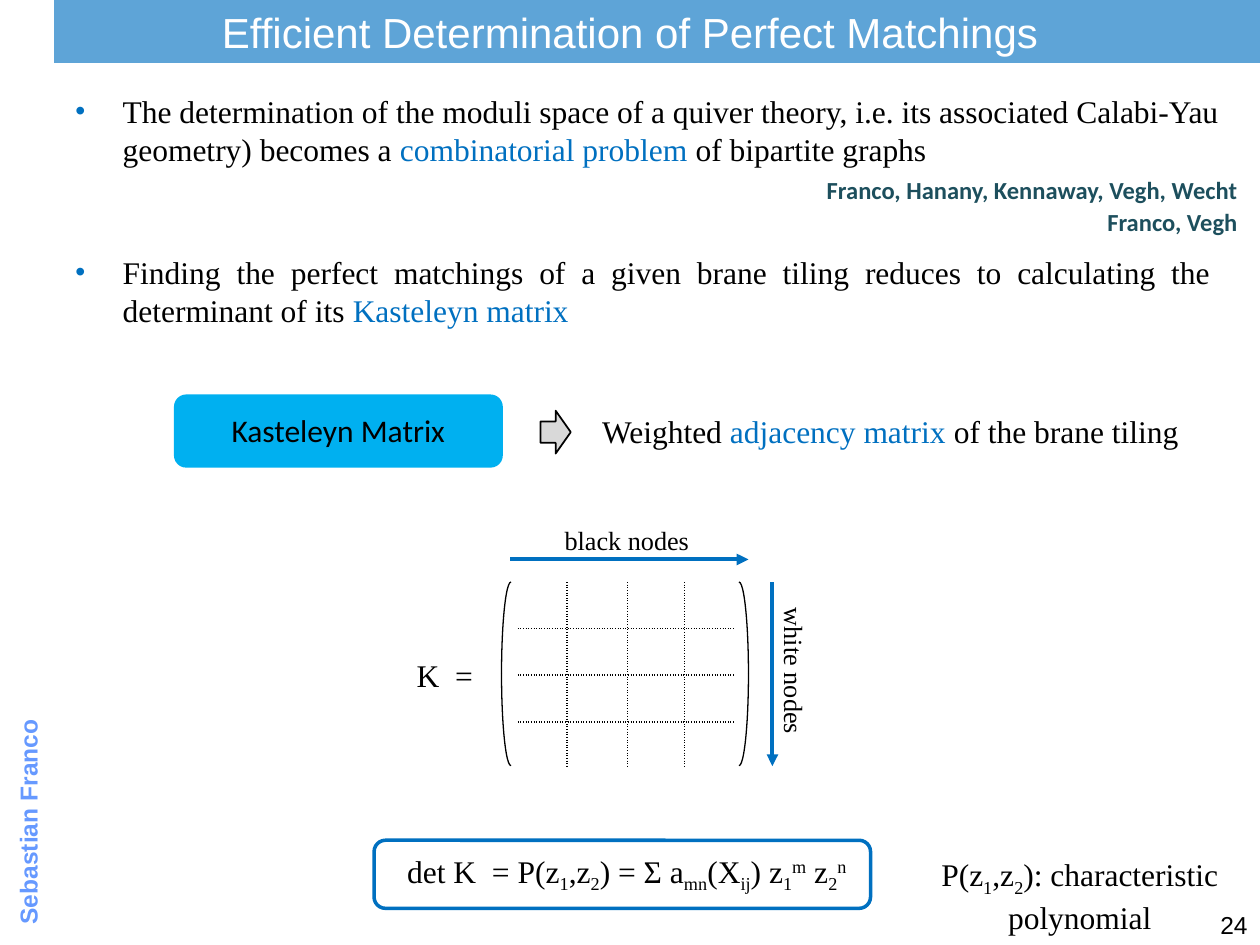
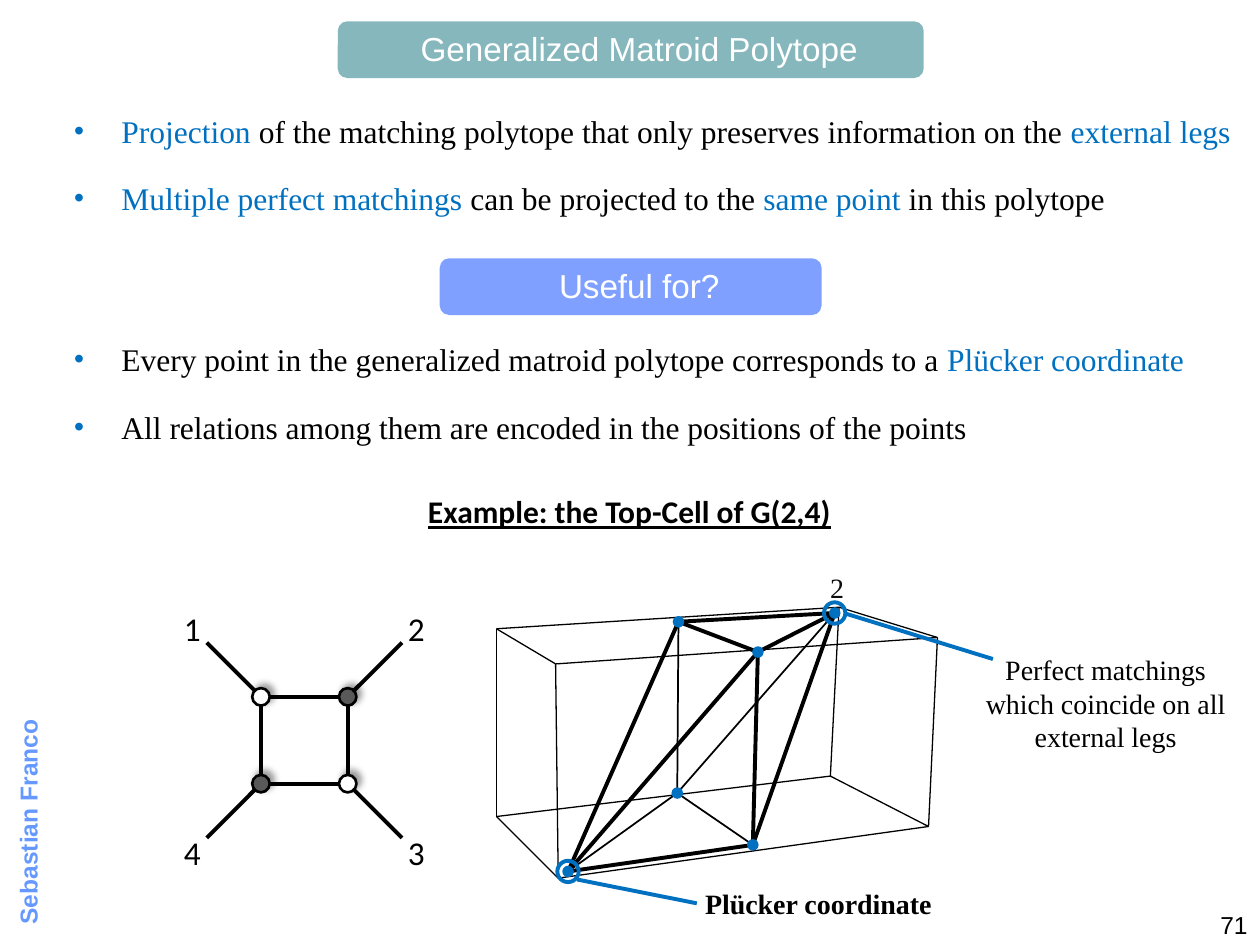
"""Build two slides on perfect matchings and the generalized matroid polytope."""
from itertools import combinations, product
from typing import NamedTuple

from lxml import etree
from pptx import Presentation
from pptx import util as u
from pptx.dml import color as dml
from pptx.enum import shapes, text
from pptx.oxml import ns

COLORS = {
    "black": "000000", "white": "FFFFFF", "accent": "0070C0", "author": "6699FF",
    "citation": "1D4F5D", "teal": "3C8C93", "violet": "3366FF", "cyan": "00B0F0",
    "light_gray": "D9D9D9", "dark_gray": "595959", "label": "0D0D0D",
}
SERIF, SANS, TITLE_FONT = "Times New Roman", "Calibri", "Arial"
LEFT, CENTER = text.PP_ALIGN.LEFT, text.PP_ALIGN.CENTER
RIGHT, JUSTIFY = text.PP_ALIGN.RIGHT, text.PP_ALIGN.JUSTIFY
SHAPE = shapes.MSO_SHAPE
SUBSCRIPT, SUPERSCRIPT = -25000, 30000
HANGING = 27


class Box(NamedTuple):
    left: float
    top: float
    width: float
    height: float


class Point(NamedTuple):
    x: float
    y: float


class Run(NamedTuple):
    text: str
    color: str = ""
    baseline: int = 0


class Bullet(NamedTuple):
    box: Box
    runs: list[Run]
    align: int = LEFT


class Band(NamedTuple):
    text: str
    box: Box
    color: str


def key(words: str) -> Run:
    return Run(words, "accent")


def sub(words: str) -> Run:
    return Run(words, baseline=SUBSCRIPT)


def sup(words: str) -> Run:
    return Run(words, baseline=SUPERSCRIPT)


def rgb(name: str) -> dml.RGBColor:
    return dml.RGBColor.from_string(COLORS[name])


def points(values) -> list:
    return [u.Pt(value) for value in values]


def add_xml(parent, tag: str, **attributes):
    return etree.SubElement(parent, ns.qn(tag), {name: str(value) for name, value in attributes.items()})


def add_color(parent, name: str):
    return add_xml(parent, "a:srgbClr", val=COLORS[name])


def add_text(slide, box: Box, content: str | list[Run], *, size: float = 18, font: str = SERIF,
             color: str = "black", align: int = LEFT, bold: bool = False,
             underline: bool = False, rotation: int = 0, bullet: bool = False) -> None:
    shape = slide.shapes.add_textbox(*points(box))
    shape.rotation = rotation
    shape.text_frame.word_wrap = True
    paragraph = shape.text_frame.paragraphs[0]
    paragraph.alignment = align
    if bullet:
        properties = paragraph._p.get_or_add_pPr()
        properties.set("marL", str(u.Pt(HANGING)))
        properties.set("indent", str(-u.Pt(HANGING)))
        add_color(add_xml(properties, "a:buClr"), "accent")
        add_xml(properties, "a:buSzPct", val=90000)
        add_xml(properties, "a:buFont", typeface="Arial")
        add_xml(properties, "a:buChar", char="•")
    for part in [Run(content)] if isinstance(content, str) else content:
        run = paragraph.add_run()
        run.text = part.text
        run.font.name, run.font.size = font, u.Pt(size)
        run.font.bold, run.font.underline = bold, underline
        run.font.color.rgb = rgb(part.color or color)
        if part.baseline:
            run._r.get_or_add_rPr().set("baseline", str(part.baseline))


def add_shape(slide, kind: int, box: Box, *, fill: str = "", opacity: int = 100, line: str = "",
              width: float = 1, shadow: bool = False):
    shape = slide.shapes.add_shape(kind, *points(box))
    shape.shadow.inherit = False
    if fill:
        shape.fill.solid()
        shape.fill.fore_color.rgb = rgb(fill)
        if opacity < 100:
            solid = shape._element.spPr.find(ns.qn("a:solidFill"))
            add_xml(solid[0], "a:alpha", val=opacity * 1000)
    else:
        shape.fill.background()
    if line:
        shape.line.color.rgb = rgb(line)
        shape.line.width = u.Pt(width)
    else:
        shape.line.fill.background()
    if shadow:
        effects = shape._element.spPr.find(ns.qn("a:effectLst"))
        outer = add_xml(effects, "a:outerShdw", blurRad=u.Pt(4), dist=u.Pt(3), dir=315 * 60000)
        add_xml(add_color(outer, "black"), "a:alpha", val=40000)
    return shape


def add_circle(slide, center: Point, diameter: float, **style) -> None:
    box = Box(center.x - diameter / 2, center.y - diameter / 2, diameter, diameter)
    add_shape(slide, SHAPE.OVAL, box, **style)


def add_line(slide, start: Point, end: Point, *, color: str = "black", width: float = 2.25,
             arrow: bool = False) -> None:
    connector = slide.shapes.add_connector(shapes.MSO_CONNECTOR.STRAIGHT, *points((*start, *end)))
    connector.line.color.rgb = rgb(color)
    connector.line.width = u.Pt(width)
    if arrow:
        add_xml(connector.line._get_or_add_ln(), "a:tailEnd", type="triangle")
    add_xml(connector._element.spPr, "a:effectLst")


def add_bullets(slide, bullets: list[Bullet]) -> None:
    for item in bullets:
        add_text(slide, item.box, item.runs, align=item.align, bullet=True)


def add_band(slide, band: Band) -> None:
    add_shape(slide, SHAPE.ROUNDED_RECTANGLE, band.box, fill=band.color, opacity=62)
    add_text(slide, Box(62.3, band.box.top + 0.7, 606, 30), band.text, size=19, font=TITLE_FONT,
             color="white", align=CENTER)


def new_slide(presentation, number: int):
    slide = presentation.slides.add_slide(presentation.slide_layouts[6])
    add_text(slide, Box(-92.2, 403.2, 228.2, 36), "Sebastian Franco", size=14, font=TITLE_FONT,
             color="author", bold=True, rotation=270)
    add_text(slide, Box(684, 516.2, 36, 24), str(number), size=14, font=TITLE_FONT, align=RIGHT)
    return slide


def add_matrix(slide) -> None:
    column_widths, row_height = [28, 34.8, 32.4, 28.8], 26
    count = len(column_widths)
    frame = slide.shapes.add_table(count, count, *points((295.9, 332.6, sum(column_widths), count * row_height)))
    table = frame.table
    table.first_row = table.horz_banding = False
    for column, width in zip(table.columns, column_widths):
        column.width = u.Pt(width)
    for row in table.rows:
        row.height = u.Pt(row_height)
    for row, column in product(range(count), repeat=2):
        cell = table.cell(row, column)
        cell.margin_top = cell.margin_bottom = u.Pt(2.5)
        properties = cell._tc.get_or_add_tcPr()
        inner = {"L": column > 0, "R": column < count - 1, "T": row > 0, "B": row < count - 1}
        for side, visible in inner.items():
            border = add_xml(properties, f"a:ln{side}", w=u.Pt(1))
            if visible:
                add_color(add_xml(border, "a:solidFill"), "black")
                add_xml(border, "a:prstDash", val="sysDot")
            else:
                add_xml(border, "a:noFill")
        cell.fill.background()
    for left, flipped in ((286.6, True), (416.9, False)):
        for upside_down in (False, True):
            arc = add_shape(slide, SHAPE.ARC, Box(left, 332.6, 10.8, 105), line="black", width=0.75)
            arc._element.spPr.xfrm.set("flipH", str(int(flipped)))
            arc._element.spPr.xfrm.set("flipV", str(int(upside_down)))
    add_text(slide, Box(231, 371.5, 85.7, 36), "K  =")
    add_line(slide, Point(291.6, 319.7), Point(427.7, 319.7), color="accent", arrow=True)
    add_line(slide, Point(441.4, 332.6), Point(441.4, 437.8), color="accent", arrow=True)
    add_text(slide, Box(295.9, 295.9, 124.6, 23.8), "black nodes", size=15, align=CENTER)
    add_text(slide, Box(392.4, 371.5, 124.6, 23.8), "white nodes", size=15, align=CENTER, rotation=90)


def build_matchings_slide(presentation) -> None:
    slide = new_slide(presentation, 24)
    add_shape(slide, SHAPE.RECTANGLE, Box(31, 0, 689, 36), fill="accent", opacity=63)
    add_text(slide, Box(94.3, 0, 531.4, 36), "Efficient Determination of Perfect Matchings", size=24,
             font=TITLE_FONT, color="white", align=CENTER)
    for top, names in ((96.5, "Franco, Hanany, Kennaway, Vegh, Wecht"), (114.5, "Franco, Vegh")):
        add_text(slide, Box(264.2, top, 450, 30), names, size=14, font=SANS, color="citation",
                 align=RIGHT, bold=True)
    add_bullets(slide, [
        Bullet(Box(36, 49, 675.4, 30), [
            Run("The determination of the moduli space of a quiver theory, i.e. its associated "
                "Calabi-Yau geometry) becomes a "),
            key("combinatorial problem "), Run("of bipartite graphs")]),
        Bullet(Box(36, 141.1, 663.1, 50.4), [
            Run("Finding the perfect matchings of a given brane tiling reduces to calculating the "
                "determinant of its "), key("Kasteleyn matrix")], JUSTIFY),
    ])
    add_shape(slide, SHAPE.ROUNDED_RECTANGLE, Box(99.4, 225.4, 187.9, 41.8), fill="cyan")
    add_text(slide, Box(105.1, 231.1, 176.4, 28), "Kasteleyn Matrix", font=SANS, align=CENTER)
    add_shape(slide, SHAPE.RIGHT_ARROW, Box(308.9, 234.7, 17.3, 24.5), fill="light_gray", line="black")
    add_text(slide, Box(337, 231.8, 366.5, 32.4), [
        Run("Weighted "), key("adjacency matrix "), Run("of the brane tiling")])
    add_matrix(slide)
    add_shape(slide, SHAPE.ROUNDED_RECTANGLE, Box(213.8, 480.2, 283.7, 38.9), line="accent", width=2)
    polynomial = [Run("P(z"), sub("1"), Run(",z"), sub("2")]
    add_text(slide, Box(216, 483.1, 284.4, 40.3), [
        Run("det K  = "), *polynomial, Run(") = Σ a"), sub("mn"), Run("(X"), sub("ij"), Run(") z"),
        sub("1"), sup("m"), Run(" z"), sub("2"), sup("n")], align=CENTER)
    add_text(slide, Box(514.1, 485.3, 205.9, 51.1),
             [*polynomial, Run("): characteristic polynomial")], align=CENTER)


def add_square_graph(slide) -> None:
    center, half, leg, label_offset = Point(173.9, 423), 24.8, 31, 39.2
    signs = [(-1, -1), (1, -1), (1, 1), (-1, 1)]
    nodes = [Point(center.x + dx * half, center.y + dy * half) for dx, dy in signs]
    for index, (node, (dx, dy)) in enumerate(zip(nodes, signs)):
        add_line(slide, node, nodes[index - 1])
        add_line(slide, node, Point(node.x + dx * leg, node.y + dy * leg))
        label = Box(node.x + dx * label_offset - 17.6, node.y + dy * label_offset - 15.1, 35.2, 30.2)
        add_text(slide, label, str(index + 1), size=19, font=SANS, align=CENTER)
    for index, node in enumerate(nodes):
        add_circle(slide, node, 10, fill=("white", "dark_gray")[index % 2], line="black", width=1.5,
                   shadow=True)


def add_polytope(slide) -> None:
    upper = [Point(283.7, 359.3), Point(479.5, 347), Point(535.7, 364.3), Point(317.5, 379.4)]
    lower = [Point(283.7, 466.6), Point(474.5, 443.5), Point(530.6, 472.3), Point(319, 501.8)]
    for index in range(4):
        for start, end in ((upper[index - 1], upper[index]), (lower[index - 1], lower[index]),
                           (upper[index], lower[index])):
            add_line(slide, start, end, width=0.75)
    vertices = {
        "top": Point(387.7, 355.3), "apex": Point(477, 350.3), "middle": Point(433.1, 372.6),
        "origin": Point(324.6, 498), "corner": Point(430.2, 482.8), "hidden": Point(387, 453.2),
    }
    opposite = [{"top", "corner"}, {"apex", "origin"}, {"middle", "hidden"}]
    for pair in combinations(vertices, 2):
        if set(pair) not in opposite:
            add_line(slide, *(vertices[name] for name in pair), width=1 if "hidden" in pair else 2.25)
    for vertex in vertices.values():
        add_circle(slide, vertex, 6.6, fill="accent")
    add_text(slide, Box(467.3, 322.6, 25.2, 29.5), "2", size=16, color="label")
    callouts = {"apex": (Point(483.1, 350.6), Point(567.4, 376.6)),
                "origin": (Point(329.8, 502.6), Point(398.2, 516.2))}
    for name, ends in callouts.items():
        add_circle(slide, vertices[name], 12.2, line="accent", width=2.25)
        add_line(slide, *ends, color="accent")
    add_text(slide, Box(547.9, 369.4, 167.8, 79.9),
             "Perfect matchings which coincide on all external legs", size=16, align=CENTER)
    add_text(slide, Box(352.8, 503.3, 229.7, 27.4), "Plücker coordinate", size=16, align=CENTER, bold=True)


def build_polytope_slide(presentation) -> None:
    slide = new_slide(presentation, 71)
    add_band(slide, Band("Generalized Matroid Polytope", Box(193, 12.2, 334.8, 32.4), "teal"))
    add_band(slide, Band("Useful for?", Box(251.3, 147.6, 218.2, 32.4), "violet"))
    bullets = {
        60.5: [key("Projection"),
               Run(" of the matching polytope that only preserves information on the "),
               key("external legs")],
        98.6: [key("Multiple perfect matchings "), Run("can be projected to the "),
               key("same point "), Run("in this polytope")],
        190.8: [Run("Every point in the generalized matroid polytope corresponds to a "),
                key("Plücker coordinate")],
        229.7: [Run("All relations among them are encoded in the positions of the points")],
    }
    add_bullets(slide, [Bullet(Box(35.3, top, 684.7, 37.4), runs) for top, runs in bullets.items()])
    add_text(slide, Box(179.3, 277.9, 360.7, 31.7), "Example: the Top-Cell of G(2,4)", font=SANS,
             align=CENTER, bold=True, underline=True)
    add_square_graph(slide)
    add_polytope(slide)


def main() -> None:
    presentation = Presentation()
    presentation.slide_width, presentation.slide_height = u.Pt(720), u.Pt(540)
    build_matchings_slide(presentation)
    build_polytope_slide(presentation)
    presentation.save("out.pptx")


if __name__ == "__main__":
    main()
